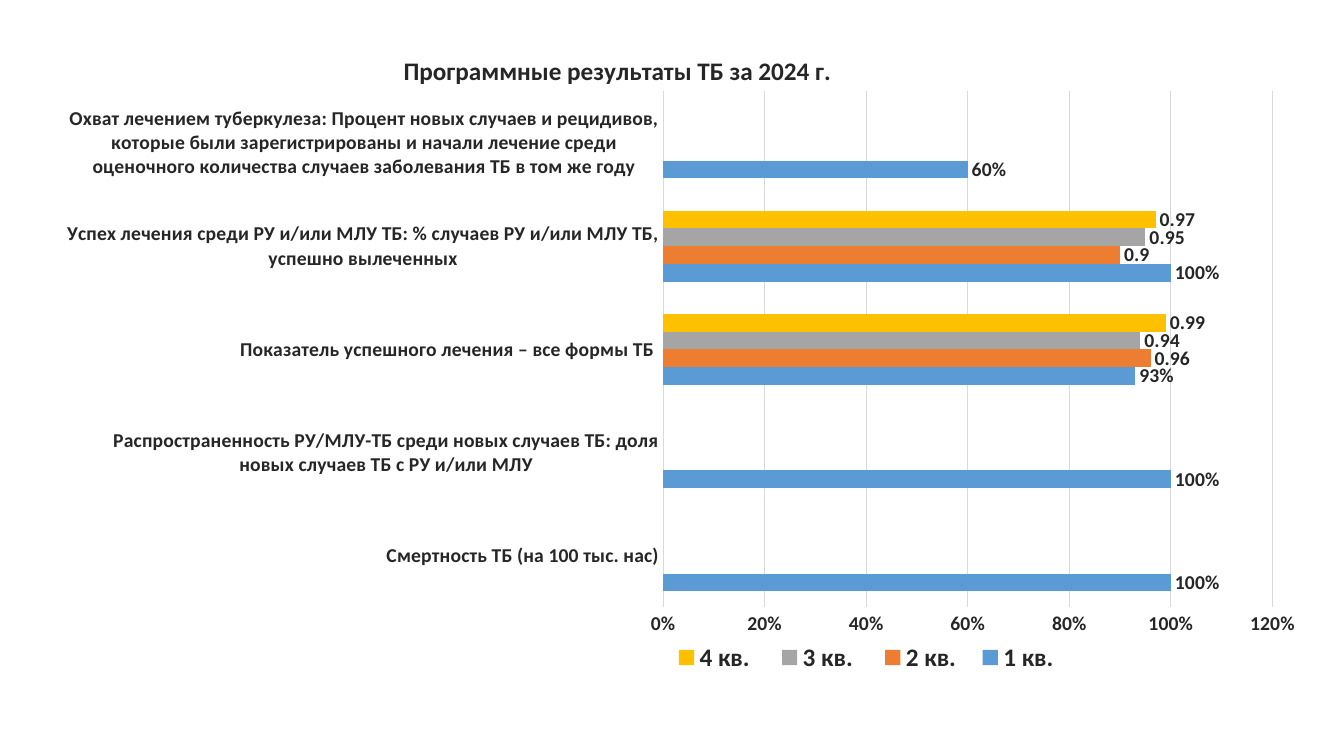
from dataclasses import dataclass

import pptx
import pptx.chart.data
import pptx.dml.color
import pptx.enum.chart
import pptx.oxml
import pptx.util
from pptx.util import Inches


@dataclass(frozen=True)
class Theme:
    font: str = "Calibri"
    text: str = "262626"
    grid: str = "D9D9D9"
    quarters: tuple = ("5B9BD5", "ED7D31", "A5A5A5", "FFC000")
    heading_size: int = 18
    label_size: int = 14
    line_width: float = 0.75


THEME = Theme()

INDICATORS = (
    "Смертность ТБ (на 100 тыс. нас)",
    "Распространенность РУ/МЛУ-ТБ среди новых случаев ТБ: доля новых случаев ТБ с РУ и/или МЛУ",
    "Показатель успешного лечения – все формы ТБ ",
    "Успех лечения среди РУ и/или МЛУ ТБ: % случаев РУ и/или МЛУ ТБ, успешно вылеченных",
    "Охват лечением туберкулеза: Процент новых случаев и рецидивов, которые были "
    "зарегистрированы и начали лечение среди оценочного количества случаев "
    "заболевания ТБ в том же году",
)
# name, values by indicator, number format
QUARTERS = (
    ("1 кв.", (1, 1, 0.93, 1, 0.6), "0%"),
    ("2 кв.", (None, None, 0.96, 0.9, None), "General"),
    ("3 кв. ", (None, None, 0.94, 0.95, None), "General"),
    ("4 кв. ", (None, None, 0.99, 0.97, None), "General"),
)


def rgb(color):
    return pptx.dml.color.RGBColor.from_string(color)


def style_font(font, size=THEME.label_size, color=THEME.text, bold=True):
    font.name = THEME.font
    font.size = pptx.util.Pt(size)
    font.bold = bold
    font.color.rgb = rgb(color)


def write_text(frame, text, **style):
    frame.text = text
    style_font(frame.paragraphs[0].runs[0].font, **style)


def style_line(line):
    line.color.rgb = rgb(THEME.grid)
    line.width = pptx.util.Pt(THEME.line_width)


def set_layout(element, index, target=None, **fractions):
    """Place a chart part by fractions of the chart; index is the layout's child position."""
    for old in element.findall(pptx.oxml.ns.qn("c:layout")):
        element.remove(old)
    settings = [("layoutTarget", target)] if target else []
    settings += [(f"{side}Mode", "edge") for side in "xy"]
    settings += fractions.items()
    inner = "".join(f'<c:{tag} val="{value}"/>' for tag, value in settings)
    element.insert(index, pptx.oxml.parse_xml(
        f'<c:layout {pptx.oxml.ns.nsdecls("c")}>'
        f"<c:manualLayout>{inner}</c:manualLayout></c:layout>"))


def style_axes(chart):
    tick = pptx.enum.chart.XL_TICK_MARK.NONE
    for axis in (chart.category_axis, chart.value_axis):
        axis.major_tick_mark = axis.minor_tick_mark = tick
        style_font(axis.tick_labels.font)
    style_line(chart.category_axis.format.line)

    percent = chart.value_axis
    percent.minimum_scale, percent.maximum_scale, percent.major_unit = 0, 1.2, 0.2
    percent.tick_labels.number_format = "0%"
    percent.tick_labels.number_format_is_linked = False
    percent.format.line.fill.background()
    percent.has_major_gridlines = True
    style_line(percent.major_gridlines.format.line)


def style_quarters(plot):
    plot.gap_width = 182
    plot.overlap = 0
    plot.vary_by_categories = False
    for quarter, color, (_, _, number_format) in zip(plot.series, THEME.quarters, QUARTERS):
        quarter.format.fill.solid()
        quarter.format.fill.fore_color.rgb = rgb(color)
        labels = quarter.data_labels
        labels.show_value = True
        labels.position = pptx.enum.chart.XL_LABEL_POSITION.OUTSIDE_END
        labels.number_format = number_format
        labels.number_format_is_linked = False
        style_font(labels.font)


def add_results_chart(slide, left, top, width, height):
    results = pptx.chart.data.CategoryChartData()
    results.categories = INDICATORS
    for name, values, number_format in QUARTERS:
        results.add_series(name, values, number_format)
    chart = slide.shapes.add_chart(
        pptx.enum.chart.XL_CHART_TYPE.BAR_CLUSTERED,
        left, top, width, height, results).chart
    style_font(chart.font)

    chart.has_title = True
    write_text(chart.chart_title.text_frame, "Программные результаты ТБ за 2024 г.",
               size=THEME.heading_size)
    set_layout(chart.chart_title._element, 1, x=0.27, y=0.04)

    chart.has_legend = True
    chart.legend.position = pptx.enum.chart.XL_LEGEND_POSITION.BOTTOM
    chart.legend.include_in_layout = False
    style_font(chart.legend.font, size=THEME.heading_size)
    set_layout(chart.legend._element, 1, x=0.48, y=0.92, w=0.33, h=0.07)

    style_axes(chart)
    style_quarters(chart.plots[0])
    plot_area = chart._chartSpace.chart.plotArea
    set_layout(plot_area, 0, target="inner", x=0.482, y=0.104, w=0.489, h=0.776)


def main():
    deck = pptx.Presentation()
    deck.slide_width, deck.slide_height = Inches(13.33), Inches(7.5)
    slide = deck.slides.add_slide(deck.slide_layouts.get_by_name("Blank"))
    add_results_chart(slide, Inches(0.62), Inches(0.22), Inches(12.36), Inches(6.6))
    deck.save("out.pptx")


if __name__ == "__main__":
    main()
